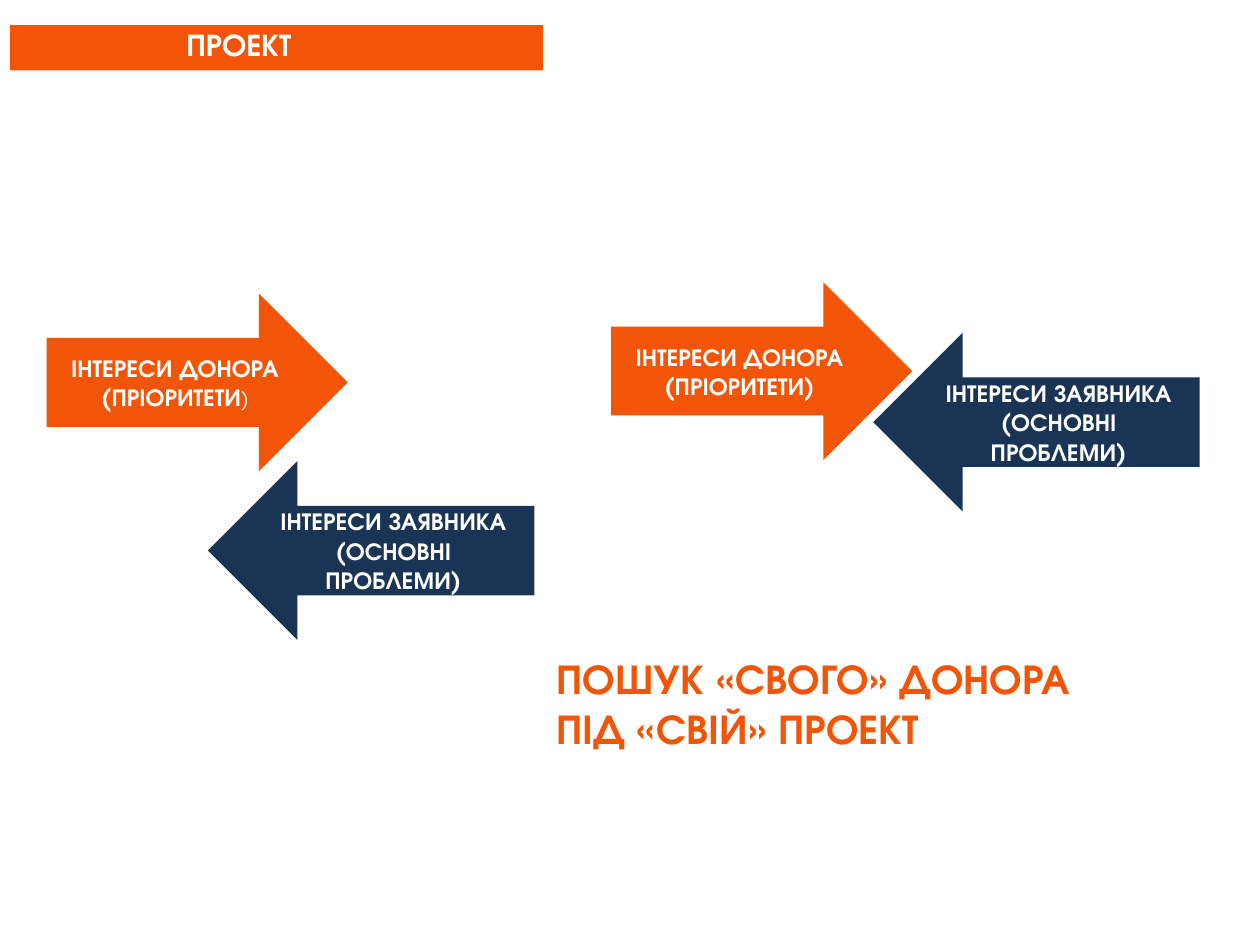
from dataclasses import dataclass

from pptx import Presentation
from pptx.dml.color import RGBColor
from pptx.enum.shapes import MSO_SHAPE as Preset
from pptx.enum.text import MSO_ANCHOR as Anchor, PP_ALIGN as Align
from pptx.util import Inches, Pt


@dataclass(frozen=True)
class Theme:
    font: str = "TeX Gyre Adventor"
    orange: RGBColor = RGBColor(0xF2, 0x55, 0x08)
    navy: RGBColor = RGBColor(0x19, 0x34, 0x55)
    white: RGBColor = RGBColor(0xFF, 0xFF, 0xFF)
    small: Pt = Pt(12)
    label: Pt = Pt(14)
    title: Pt = Pt(18)
    slogan: Pt = Pt(24)


THEME = Theme()
DONOR_SIZE = (2.39, 1.41)
APPLICANT_SIZE = (2.59, 1.42)
APPLICANT_LINES = ["ІНТЕРЕСИ ЗАЯВНИКА", "(ОСНОВНІ ПРОБЛЕМИ)"]


def write_lines(frame, lines, size, color, align):
    frame.word_wrap = True
    frame.text = "\n".join(lines)
    for para in frame.paragraphs:
        para.alignment = align
        para.font.name = THEME.font
        para.font.size = size
        para.font.bold = True
        para.font.color.rgb = color


def add_block(page, preset, box, color):
    block = page.shapes.add_shape(preset, *map(Inches, box))
    block.shadow.inherit = False
    block.fill.solid()
    block.fill.fore_color.rgb = color
    block.line.fill.background()
    return block


def add_arrow(page, preset, box, color, lines):
    frame = add_block(page, preset, box, color).text_frame
    frame.vertical_anchor = Anchor.MIDDLE
    write_lines(frame, lines, THEME.label, THEME.white, Align.CENTER)
    return frame.paragraphs[-1]


def add_header(page, left, top, width, height):
    add_block(page, Preset.RECTANGLE, (left, top, width, height), THEME.orange)
    title = page.shapes.title
    title.left, title.top = Inches(left + 1.3), Inches(top + 0.08)
    title.width, title.height = Inches(4.12), Inches(0.29)
    title.text_frame.vertical_anchor = Anchor.TOP
    write_lines(title.text_frame, ["ПРОЕКТ"], THEME.title, THEME.white, Align.LEFT)
    title.text_frame.paragraphs[0].line_spacing = Pt(12)
    page.shapes.element.append(title.element)


def add_arrow_pair(page, left, top, shift, donor_text):
    donor_para = add_arrow(page, Preset.RIGHT_ARROW, (left, top, *DONOR_SIZE),
                           THEME.orange, [donor_text])
    add_arrow(page, Preset.LEFT_ARROW,
              (left + shift[0], top + shift[1], *APPLICANT_SIZE),
              THEME.navy, APPLICANT_LINES)
    return donor_para


def add_slogan(page, box):
    slogan = page.shapes.add_textbox(*map(Inches, box))
    write_lines(slogan.text_frame, ["ПОШУК «СВОГО» ДОНОРА", "ПІД «СВІЙ» ПРОЕКТ"],
                THEME.slogan, THEME.orange, Align.LEFT)


def main():
    deck = Presentation()
    deck.slide_width, deck.slide_height = Inches(10), Inches(7.5)
    page = deck.slides.add_slide(deck.slide_layouts[5])

    add_arrow_pair(page, 4.85, 2.24, (2.08, 0.4), "ІНТЕРЕСИ ДОНОРА (ПРІОРИТЕТИ)")
    add_header(page, 0.08, 0.2, 4.23, 0.36)
    donor_para = add_arrow_pair(page, 0.37, 2.33, (1.28, 1.33),
                                "ІНТЕРЕСИ ДОНОРА (ПРІОРИТЕТИ")
    bracket = donor_para.add_run()
    bracket.text = ")"
    bracket.font.size = THEME.small
    bracket.font.bold = False
    add_slogan(page, (4.32, 5.13, 4.83, 1.31))

    deck.save("out.pptx")


if __name__ == "__main__":
    main()
